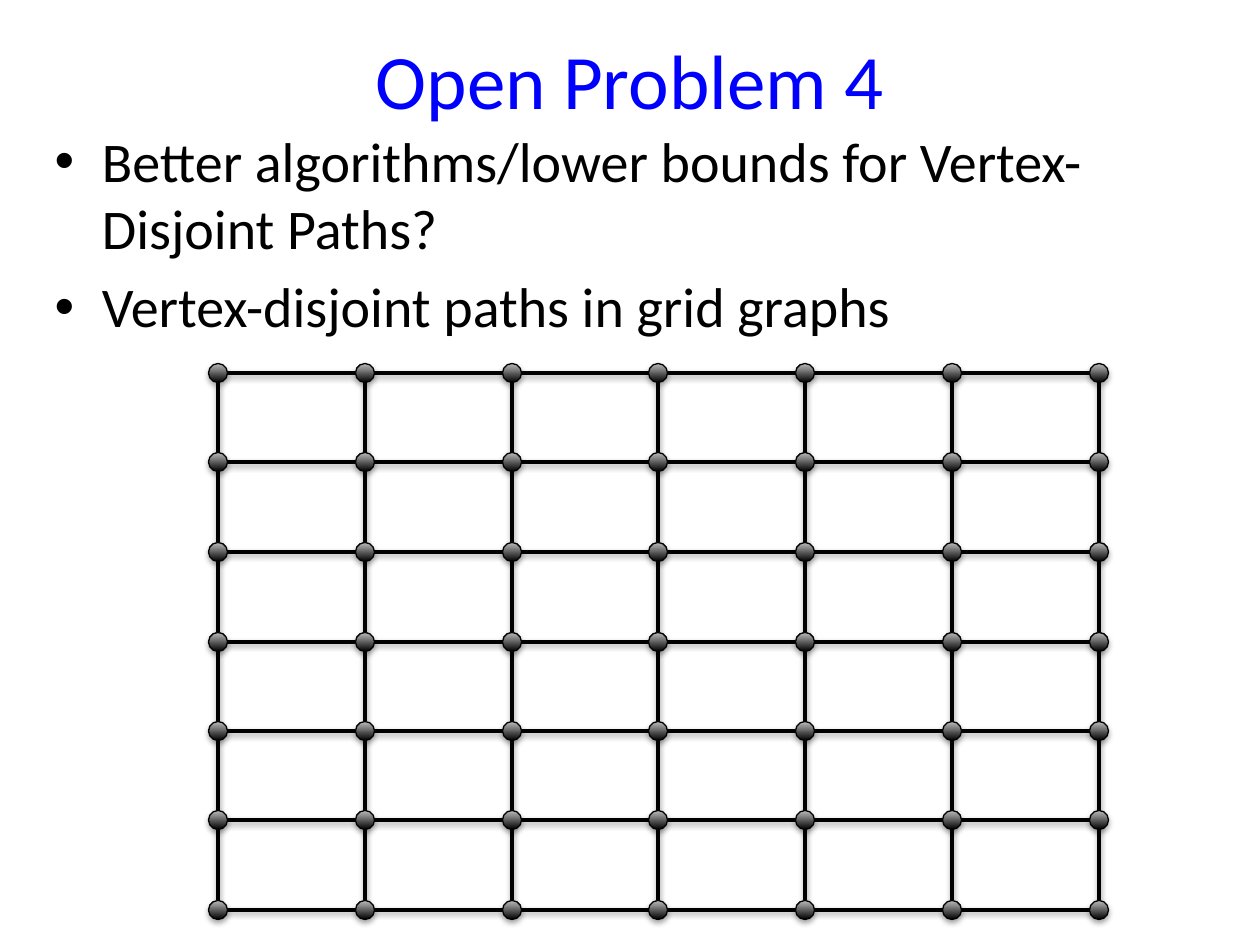
"""Build a slide on an open problem about vertex-disjoint paths, with a grid graph."""
import dataclasses

import lxml.etree
import pptx
import pptx.dml.color
import pptx.enum.shapes
import pptx.enum.text
import pptx.oxml.ns
import pptx.util

HEADING = "Open Problem 4"
QUESTIONS = [
    "Better algorithms/lower bounds for Vertex-Disjoint Paths?",
    "Vertex-disjoint paths in grid graphs",
]
HEADING_BOX = (63, 0, 1134, 158)
QUESTIONS_BOX = (42, 120, 1134, 624)
GRID = {"columns": 7, "rows": 7, "left": 218, "right": 1099, "top": 373, "bottom": 910}
VERTEX_SIZE = 19
PX = pptx.util.Inches(1) / 126


@dataclasses.dataclass(frozen=True)
class Theme:
    font: str = "Calibri"
    heading: str = "0000FF"
    ink: str = "000000"
    highlight: str = "BDBDBD"
    heading_size: int = 44
    question_size: int = 32
    edge_width: float = 2
    outline_width: float = 0.75


THEME = Theme()


def emu(px):
    return round(px * PX)


def rgb(color):
    return pptx.dml.color.RGBColor.from_string(color)


def spread(first, last, count):
    return [round(first + (last - first) * i / (count - 1)) for i in range(count)]


def write(paragraph, text, *, size, color, align):
    paragraph.alignment = align
    run = paragraph.add_run()
    run.text = text
    run.font.name = THEME.font
    run.font.size = pptx.util.Pt(size)
    run.font.color.rgb = rgb(color)


def place(placeholder, box):
    placeholder.left, placeholder.top, placeholder.width, placeholder.height = map(emu, box)


def cast_shadow(part, *, opacity, distance):
    qn = pptx.oxml.ns.qn
    effects = lxml.etree.SubElement(part.element.spPr, qn("a:effectLst"))
    shadow = lxml.etree.SubElement(
        effects, qn("a:outerShdw"), blurRad="40000", dist=str(distance),
        dir="5400000", rotWithShape="0")
    color = lxml.etree.SubElement(shadow, qn("a:srgbClr"), val=THEME.ink)
    lxml.etree.SubElement(color, qn("a:alpha"), val=str(opacity * 1000))


def add_edge(shapes, start, end):
    edge = shapes.add_connector(
        pptx.enum.shapes.MSO_CONNECTOR.STRAIGHT, *map(emu, (*start, *end)))
    edge.line.color.rgb = rgb(THEME.ink)
    edge.line.width = pptx.util.Pt(THEME.edge_width)
    cast_shadow(edge, opacity=38, distance=20000)


def add_vertex(shapes, x, y):
    corner = (x - VERTEX_SIZE / 2, y - VERTEX_SIZE / 2)
    vertex = shapes.add_shape(
        pptx.enum.shapes.MSO_SHAPE.OVAL, *map(emu, (*corner, VERTEX_SIZE, VERTEX_SIZE)))
    vertex.fill.gradient()
    vertex.fill.gradient_angle = 90
    for stop, color, position in zip(
            vertex.fill.gradient_stops, (THEME.ink, THEME.highlight), (0, 1)):
        stop.color.rgb = rgb(color)
        stop.position = position
    vertex.line.color.rgb = rgb(THEME.ink)
    vertex.line.width = pptx.util.Pt(THEME.outline_width)
    cast_shadow(vertex, opacity=35, distance=23000)


def main():
    deck = pptx.Presentation()
    deck.slide_width, deck.slide_height = emu(1260), emu(945)
    slide = deck.slides.add_slide(deck.slide_layouts[1])
    shapes = slide.shapes
    heading, questions = shapes.title, slide.placeholders[1]

    place(heading, HEADING_BOX)
    heading.text_frame.vertical_anchor = pptx.enum.text.MSO_ANCHOR.MIDDLE
    write(heading.text_frame.paragraphs[0], HEADING, size=THEME.heading_size,
          color=THEME.heading, align=pptx.enum.text.PP_ALIGN.CENTER)

    place(questions, QUESTIONS_BOX)
    body = questions.text_frame
    for i, question in enumerate(QUESTIONS):
        paragraph = body.add_paragraph() if i else body.paragraphs[0]
        write(paragraph, question, size=THEME.question_size,
              color=THEME.ink, align=pptx.enum.text.PP_ALIGN.LEFT)

    columns = spread(GRID["left"], GRID["right"], GRID["columns"])
    rows = spread(GRID["top"], GRID["bottom"], GRID["rows"])
    for x in columns:
        add_edge(shapes, (x, rows[0] + VERTEX_SIZE / 2), (x, rows[-1] - VERTEX_SIZE / 2))
    shapes.element.append(questions.element)
    for y in rows:
        row = shapes.add_group_shape().shapes
        add_edge(row, (columns[0], y), (columns[-1], y))
        for x in reversed(columns):
            add_vertex(row, x, y)
    shapes.element.append(heading.element)

    deck.save("out.pptx")


if __name__ == "__main__":
    main()
